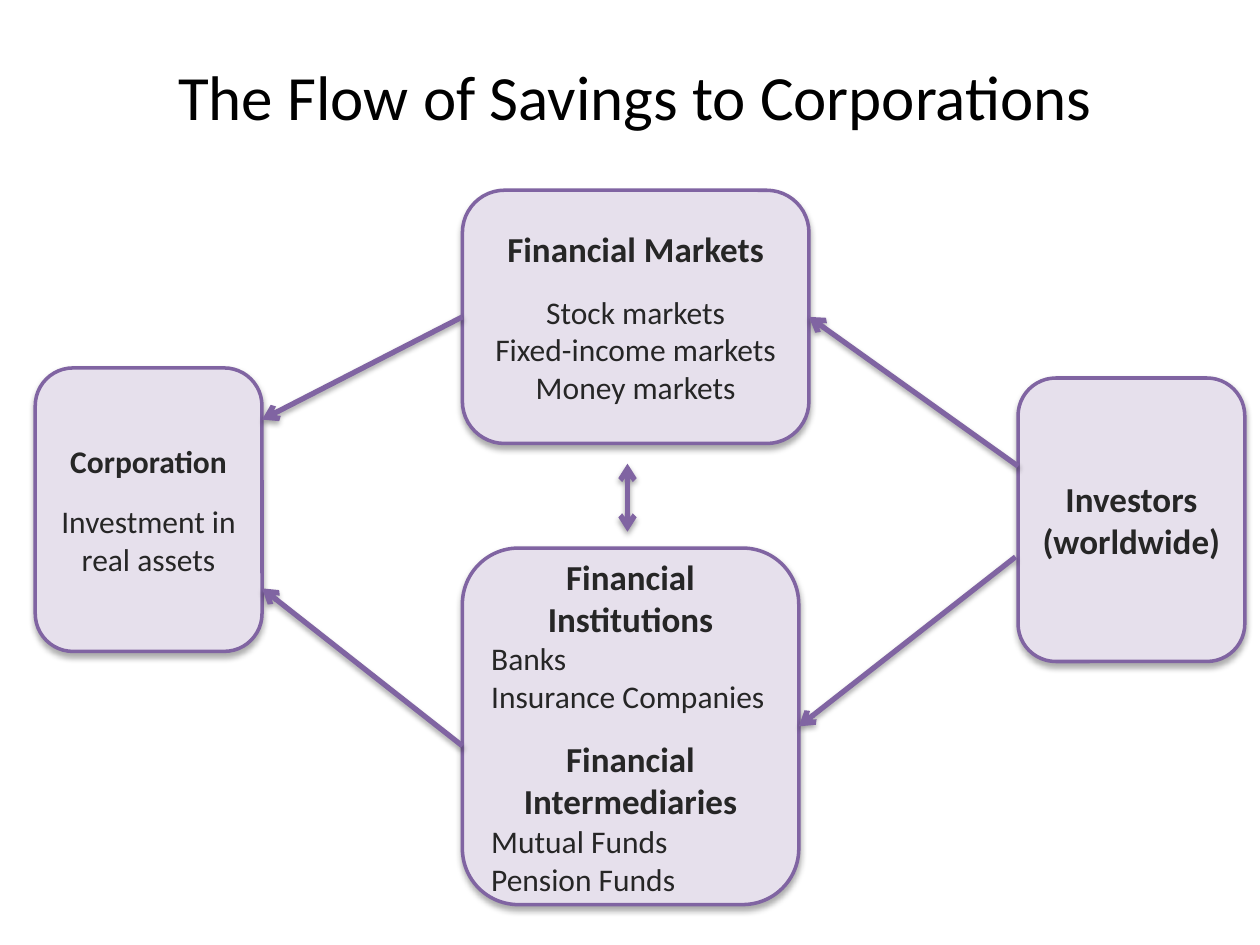
"""Build the slide showing how savings flow from investors to corporations."""
from lxml import etree
from pptx import Presentation
from pptx.dml.color import RGBColor
from pptx.enum.shapes import MSO_CONNECTOR, MSO_SHAPE
from pptx.enum.text import MSO_ANCHOR, PP_ALIGN
from pptx.oxml import parse_xml
from pptx.oxml.ns import qn
from pptx.util import Inches, Pt

ROUNDED, STRAIGHT = MSO_SHAPE.ROUNDED_RECTANGLE, MSO_CONNECTOR.STRAIGHT
MIDDLE, CENTER, LEFT = MSO_ANCHOR.MIDDLE, PP_ALIGN.CENTER, PP_ALIGN.LEFT
LEFT_SIDE, RIGHT_SIDE = 1, 3

THEME = {
    "font": "Calibri", "title_size": 36, "head_size": 20, "body_size": 18, "gap": 13,
    "title": RGBColor(0, 0, 0), "text": RGBColor(0x26, 0x26, 0x26),
    "fill": RGBColor(0xE6, 0xE0, 0xEC), "line": RGBColor(0x80, 0x64, 0xA2),
    "box_width": 2, "arrow_width": 3,
    "box_shadow": (3.5, 2.2, 32), "arrow_shadow": (3.1, 1.8, 35),
}
STYLES = {
    "head": (THEME["head_size"], True, CENTER, 0),
    "next_head": (THEME["head_size"], True, CENTER, THEME["gap"]),
    "small_head": (THEME["body_size"], True, CENTER, 0),
    "first": (THEME["body_size"], False, CENTER, THEME["gap"]),
    "body": (THEME["body_size"], False, CENTER, 0),
    "item": (THEME["body_size"], False, LEFT, 0),
}

TITLE = "The Flow of Savings to Corporations"
TITLE_AT = (0.54, 0.13, 9, 1.25)
BOXES = {
    "corporation": ((0.28, 2.92, 1.8, 2.25), [
        ("Corporation", "small_head"), ("Investment in real assets", "first")]),
    "investors": ((8.08, 3, 1.8, 2.25), [
        ("Investors", "head"), ("(worldwide)", "head")]),
    "markets": ((3.67, 1.51, 2.75, 2.01), [
        ("Financial Markets", "head"), ("Stock markets", "first"),
        ("Fixed-income markets", "body"), ("Money markets", "body")]),
    "institutions": ((3.67, 4.35, 2.67, 2.83), [
        ("Financial Institutions", "head"), ("Banks", "item"),
        ("Insurance Companies", "item"), ("Financial Intermediaries", "next_head"),
        ("Mutual Funds", "item"), ("Pension Funds", "item")]),
}
ARROWS = [
    {"start": (4.98, 3.68), "end": (4.98, 4.22), "both": True},
    {"start": (8.08, 3.7), "end": (6.42, 2.51), "end_join": ("markets", RIGHT_SIDE)},
    {"start": (8.06, 4.42), "end": (6.34, 5.76), "end_join": ("institutions", RIGHT_SIDE)},
    {"start": (3.67, 2.51), "end": (2.08, 3.33), "begin_join": ("markets", LEFT_SIDE)},
    {"start": (3.67, 5.92), "end": (2.08, 4.67)},
]


def set_shadow(shape, blur, distance, opacity):
    shape.element.spPr.append(parse_xml(
        '<a:effectLst xmlns:a="http://schemas.openxmlformats.org/drawingml/2006/main">'
        f'<a:outerShdw blurRad="{Pt(blur)}" dist="{Pt(distance)}" dir="5400000" rotWithShape="0">'
        f'<a:srgbClr val="000000"><a:alpha val="{opacity * 1000}"/></a:srgbClr>'
        '</a:outerShdw></a:effectLst>'))


def set_line(shape, width):
    shape.line.color.rgb = THEME["line"]
    shape.line.width = Pt(width)


def add_title(s):
    title = s.shapes.title
    title.left, title.top, title.width, title.height = map(Inches, TITLE_AT)
    tf = title.text_frame
    tf.text, tf.vertical_anchor = TITLE, MIDDLE
    p = tf.paragraphs[0]
    p.alignment = CENTER
    p.font.name, p.font.size = THEME["font"], Pt(THEME["title_size"])
    p.font.color.rgb = THEME["title"]


def add_box(s, at, lines):
    sp = s.shapes.add_shape(ROUNDED, *map(Inches, at))
    sp.fill.solid()
    sp.fill.fore_color.rgb = THEME["fill"]
    set_line(sp, THEME["box_width"])
    set_shadow(sp, *THEME["box_shadow"])
    tf = sp.text_frame
    tf.word_wrap, tf.vertical_anchor = True, MIDDLE
    tf.text = "\n".join(text for text, _ in lines)
    for p, (_, style) in zip(tf.paragraphs, lines):
        size, bold, p.alignment, gap = STYLES[style]
        p.space_before = Pt(gap)
        p.font.name, p.font.size, p.font.bold = THEME["font"], Pt(size), bold
        p.font.color.rgb = THEME["text"]
    return sp


def add_arrow(s, boxes, start, end, both=False, begin_join=None, end_join=None):
    line = s.shapes.add_connector(STRAIGHT, *map(Inches, start + end))
    if begin_join:
        line.begin_connect(boxes[begin_join[0]], begin_join[1])
    if end_join:
        line.end_connect(boxes[end_join[0]], end_join[1])
    set_line(line, THEME["arrow_width"])
    ln = line.element.spPr.find(qn("a:ln"))
    for tag in ("a:headEnd", "a:tailEnd") if both else ("a:tailEnd",):
        etree.SubElement(ln, qn(tag), type="arrow")
    set_shadow(line, *THEME["arrow_shadow"])


def main():
    prs = Presentation()
    prs.slide_width, prs.slide_height = Inches(10), Inches(7.5)
    s = prs.slides.add_slide(prs.slide_layouts[5])
    add_title(s)
    boxes = {name: add_box(s, at, lines) for name, (at, lines) in BOXES.items()}
    for arrow in ARROWS:
        add_arrow(s, boxes, **arrow)
    prs.save("out.pptx")


if __name__ == "__main__":
    main()
